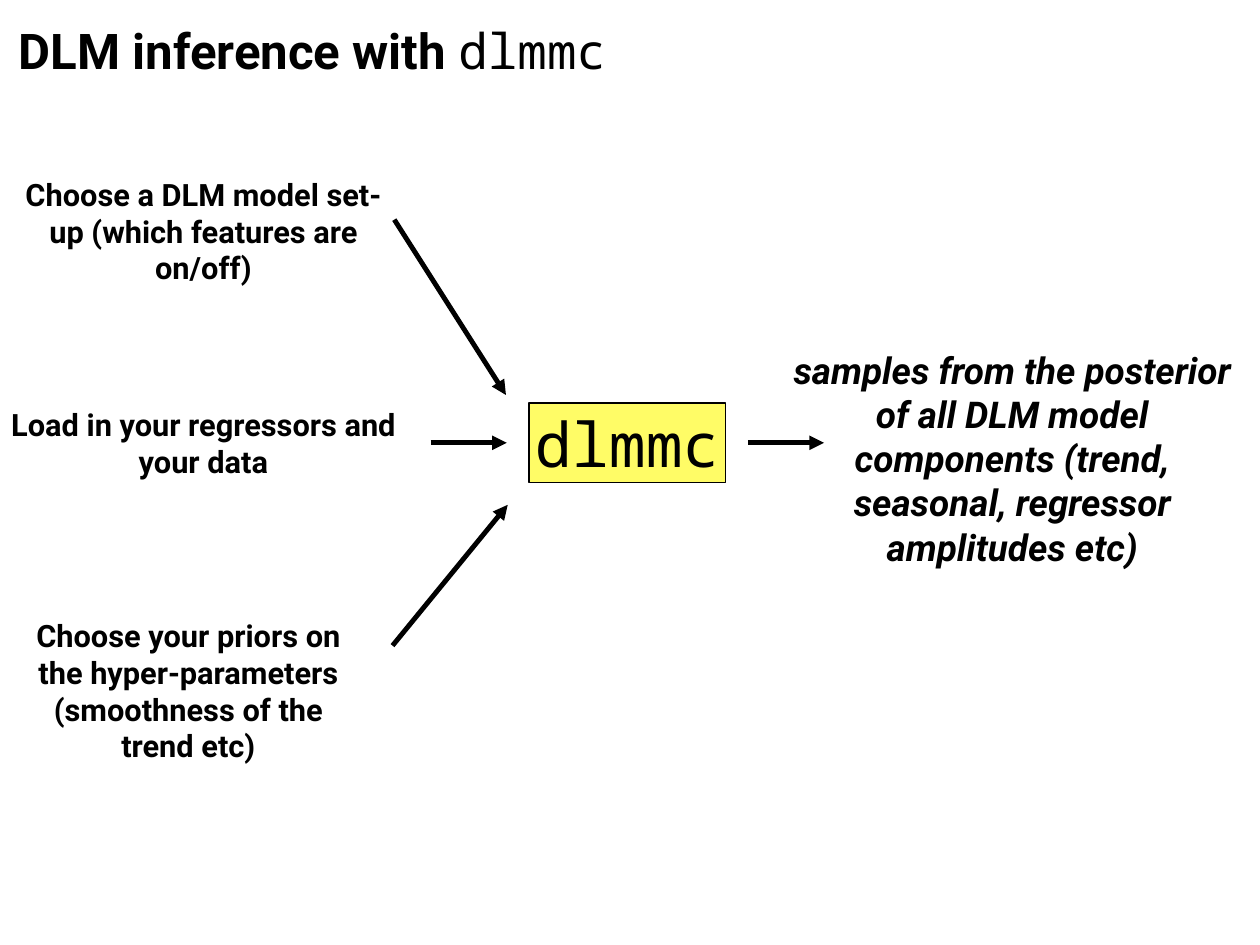
"""Build a slide showing the inputs and output of DLM inference with dlmmc."""
import dataclasses

import lxml.etree
import pptx
import pptx.dml.color
import pptx.enum.shapes
import pptx.enum.text
import pptx.oxml.ns
import pptx.util

PX = 9144
INSET = 6


@dataclasses.dataclass(frozen=True)
class Theme:
    ink: str = "000000"
    highlight: str = "FFFC66"
    sans: str = "Roboto"
    mono: str = "Noto Sans Mono"
    title_size: int = 40
    input_size: int = 25
    output_size: int = 30
    code_size: int = 50
    border: int = 1
    arrow: int = 4


THEME = Theme()


def px(*lengths):
    return [pptx.util.Emu(length * PX) for length in lengths]


def rgb(value):
    return pptx.dml.color.RGBColor.from_string(value)


def set_font(font, name, size, bold=False, italic=False):
    font.name = name
    font.size = pptx.util.Pt(size)
    font.bold = bold
    font.italic = italic
    font.color.rgb = rgb(THEME.ink)


def set_frame(sp, wrap):
    tf = sp.text_frame
    tf.word_wrap = wrap
    tf.auto_size = pptx.enum.text.MSO_AUTO_SIZE.SHAPE_TO_FIT_TEXT
    tf.vertical_anchor = pptx.enum.text.MSO_ANCHOR.MIDDLE
    tf.margin_left, tf.margin_top, tf.margin_right, tf.margin_bottom = px(*[INSET] * 4)
    return tf.paragraphs[0]


def add_title(s, box, text, code):
    p = set_frame(s.shapes.add_textbox(*px(*box)), wrap=False)
    for words, name, bold in ((text, THEME.sans, True), (code, THEME.mono, False)):
        r = p.add_run()
        r.text = words
        set_font(r.font, name, THEME.title_size, bold)


def add_label(s, box, text, size, italic=False):
    p = set_frame(s.shapes.add_textbox(*px(*box)), wrap=True)
    p.text = text
    p.alignment = pptx.enum.text.PP_ALIGN.CENTER
    set_font(p.font, THEME.sans, size, True, italic)


def add_code_box(s, box, text):
    sp = s.shapes.add_shape(pptx.enum.shapes.MSO_SHAPE.RECTANGLE, *px(*box))
    sp.shadow.inherit = False
    sp.fill.solid()
    sp.fill.fore_color.rgb = rgb(THEME.highlight)
    sp.line.color.rgb = rgb(THEME.ink)
    sp.line.width = pptx.util.Pt(THEME.border)
    p = set_frame(sp, wrap=False)
    p.text = text
    p.alignment = pptx.enum.text.PP_ALIGN.CENTER
    set_font(p.font, THEME.mono, THEME.code_size)


def add_arrow(s, start, end):
    straight = pptx.enum.shapes.MSO_CONNECTOR.STRAIGHT
    arrow = s.shapes.add_connector(straight, *px(*start, *end))
    arrow.line.color.rgb = rgb(THEME.ink)
    arrow.line.width = pptx.util.Pt(THEME.arrow)
    qn = pptx.oxml.ns.qn
    lxml.etree.SubElement(arrow.line._get_or_add_ln(), qn("a:tailEnd"), type="triangle")
    lxml.etree.SubElement(arrow._element.spPr, qn("a:effectLst"))


def main():
    prs = pptx.Presentation()
    prs.slide_width, prs.slide_height = px(1422, 1067)
    s = prs.slides.add_slide(prs.slide_layouts[6])

    add_title(s, (15, 17, 709, 78), "DLM inference with ", "dlmmc")
    inputs = (
        ((17, 193, 425, 135), "Choose a DLM model set-up (which features are on/off)"),
        ((-3, 453, 465, 93), "Load in your regressors and your data"),
        ((20, 691, 385, 177),
         "Choose your priors on the hyper-parameters (smoothness of the trend etc)"),
    )
    for box, text in inputs:
        add_label(s, box, text, THEME.input_size)
    add_code_box(s, (597, 455, 222, 90), "dlmmc")
    add_label(
        s, (884, 358, 517, 318),
        "samples from the posterior of all DLM model components "
        "(trend, seasonal, regressor amplitudes etc)",
        THEME.output_size, italic=True,
    )
    arrows = (
        ((445, 248), (571, 446)),
        ((486, 500), (572, 500)),
        ((443, 729), (573, 570)),
        ((844, 500), (930, 500)),
    )
    for start, end in arrows:
        add_arrow(s, start, end)

    prs.save("out.pptx")


if __name__ == "__main__":
    main()
